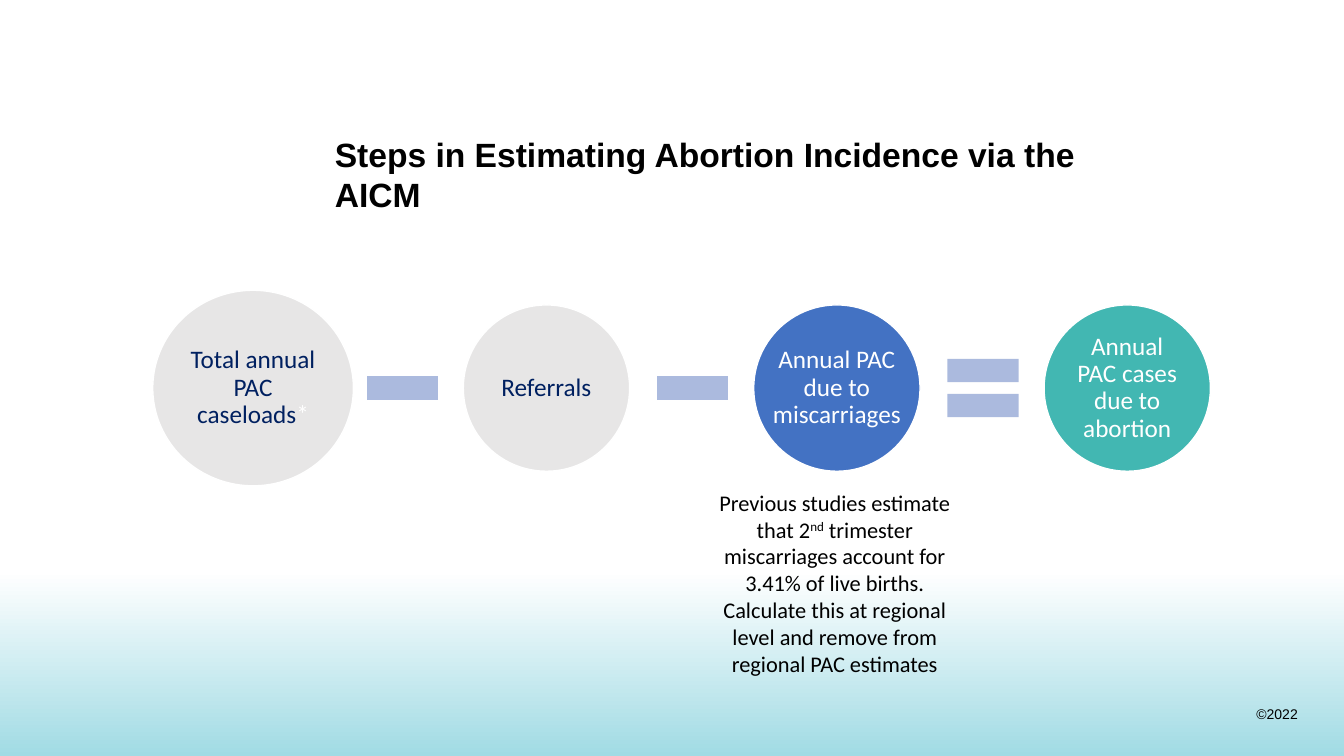
from lxml import etree
from pptx import Presentation
from pptx.dml.color import RGBColor
from pptx.enum.shapes import MSO_SHAPE
from pptx.enum.text import MSO_ANCHOR, MSO_AUTO_SIZE, PP_ALIGN
from pptx.oxml.ns import qn
from pptx.util import Inches, Pt

OVAL, MINUS, EQUAL = MSO_SHAPE.OVAL, MSO_SHAPE.MATH_MINUS, MSO_SHAPE.MATH_EQUAL
RECTANGLE = MSO_SHAPE.RECTANGLE
TOP, MIDDLE = MSO_ANCHOR.TOP, MSO_ANCHOR.MIDDLE
LEFT, CENTER, RIGHT = PP_ALIGN.LEFT, PP_ALIGN.CENTER, PP_ALIGN.RIGHT
NO_FIT = MSO_AUTO_SIZE.NONE

COLORS = {"white": "FFFFFF", "black": "000000", "navy": "002060", "gray": "E7E6E6",
          "blue": "4372C3", "teal": "42B7B2", "operator": "ABBADE", "glow": "A1DBE4"}


def rgb(name):
    return RGBColor.from_string(COLORS[name])


class SlideBuilder:
    body_font = "Calibri"
    heading_font = "Arial"

    def __init__(self, page):
        self.page = page

    def fill_text(self, frame, spans, size, align=CENTER, anchor=TOP, font=None,
                  bold=False, inset=(0.1, 0.05), spacing=None, wrap=True):
        """Each span is (text, colour) or (text, colour, baseline)."""
        frame.word_wrap = wrap
        frame.auto_size = NO_FIT
        frame.vertical_anchor = anchor
        frame.margin_left = frame.margin_right = Inches(inset[0])
        frame.margin_top = frame.margin_bottom = Inches(inset[1])
        para = frame.paragraphs[0]
        para.alignment = align
        para.line_spacing = spacing
        for text, color, *baseline in spans:
            span = para.add_run()
            span.text = text
            span.font.name = font or self.body_font
            span.font.size = Pt(size)
            span.font.bold = bold
            span.font.color.rgb = rgb(color)
            if baseline:
                span.font._element.set("baseline", str(baseline[0]))

    def title(self, text, left, top, width, height):
        box = self.page.shapes.title
        box.left, box.top = Inches(left), Inches(top)
        box.width, box.height = Inches(width), Inches(height)
        self.fill_text(box.text_frame, [(text, "black")], 24, LEFT,
                       font=self.heading_font, bold=True)

    def text(self, spans, left, top, width, height, size, **style):
        box = self.page.shapes.add_textbox(Inches(left), Inches(top),
                                           Inches(width), Inches(height))
        self.fill_text(box.text_frame, spans, size, **style)

    def shape(self, kind, left, top, width, height, fill=None):
        shape = self.page.shapes.add_shape(kind, Inches(left), Inches(top),
                                           Inches(width), Inches(height))
        shape.shadow.inherit = False
        shape.line.fill.background()
        if fill:
            shape.fill.solid()
            shape.fill.fore_color.rgb = rgb(fill)
        return shape

    def gradient_band(self, left, top, width, height, start, end):
        band = self.shape(RECTANGLE, left, top, width, height)
        band.fill.gradient()
        band.fill.gradient_angle = 270
        for stop, color, position in zip(band.fill.gradient_stops, (start, end), (0, 1)):
            stop.color.rgb = rgb(color)
            stop.position = position

    def circle(self, center_x, center_y, width, height, fill, spans, text_width,
               text_height, opacity=None):
        circle = self.shape(OVAL, center_x - width / 2, center_y - height / 2,
                            width, height, fill)
        circle.line.color.rgb = rgb("white")
        circle.line.width = Pt(1)
        if opacity:
            color = circle._element.spPr.find(qn("a:solidFill"))[0]
            etree.SubElement(color, qn("a:alpha")).set("val", str(opacity * 1000))
        self.text(spans, center_x - text_width / 2, center_y - text_height / 2,
                  text_width, text_height, 18, anchor=MIDDLE,
                  inset=(0.02, 0.02), spacing=0.9)

    def operator(self, kind, center_x, center_y, size, adjustments):
        sign = self.shape(kind, center_x - size / 2, center_y - size / 2,
                          size, size, "operator")
        for index, value in enumerate(adjustments):
            sign.adjustments[index] = value


def main():
    deck = Presentation()
    deck.slide_width, deck.slide_height = Inches(13.33), Inches(7.5)
    page = deck.slides.add_slide(deck.slide_layouts[5])
    builder = SlideBuilder(page)

    # Background band, copyright and title
    builder.gradient_band(0, 5.67, 13.33, 1.83, "white", "glow")
    builder.text([("©2022", "black")], 12.36, 6.95, 0.61, 0.27, 10,
                 align=RIGHT, font=builder.heading_font, wrap=False)
    builder.title("Steps in Estimating Abortion Incidence via the AICM",
                  3.22, 1.28, 8.31, 0.72)

    # Equation: circles with operators between them
    middle, pitch = 3.85, 2.88
    builder.circle(2.51, middle, 1.99, 1.94, "gray",
                   [("Total annual PAC caseloads", "navy"), ("*", "white")],
                   1.4, 1.37, opacity=96)
    steps = [("Referrals", "navy", "gray", 1.17),
             ("Annual PAC due to miscarriages", "white", "blue", 1.4),
             ("Annual PAC cases due to abortion", "white", "teal", 1.17)]
    operators = [(MINUS, [0.24]), (MINUS, [0.24]), (EQUAL, [0.24, 0.12])]
    for index, (label, ink, fill, text_width) in enumerate(steps):
        kind, adjustments = operators[index]
        builder.operator(kind, 3.99 + index * pitch, middle, 0.96, adjustments)
        builder.circle(5.42 + index * pitch, middle, 1.65, 1.65, fill,
                       [(label, ink)], text_width, 1.17)

    # Note under the miscarriages step
    builder.text([("Previous studies estimate that 2", "black"),
                  ("nd", "black", 30000),
                  (" trimester miscarriages account for 3.41% of live births. "
                   "Calculate this at regional level and remove from regional "
                   "PAC estimates", "black")],
                 6.86, 4.8, 2.84, 1.99, 16)

    deck.save("out.pptx")


if __name__ == "__main__":
    main()
